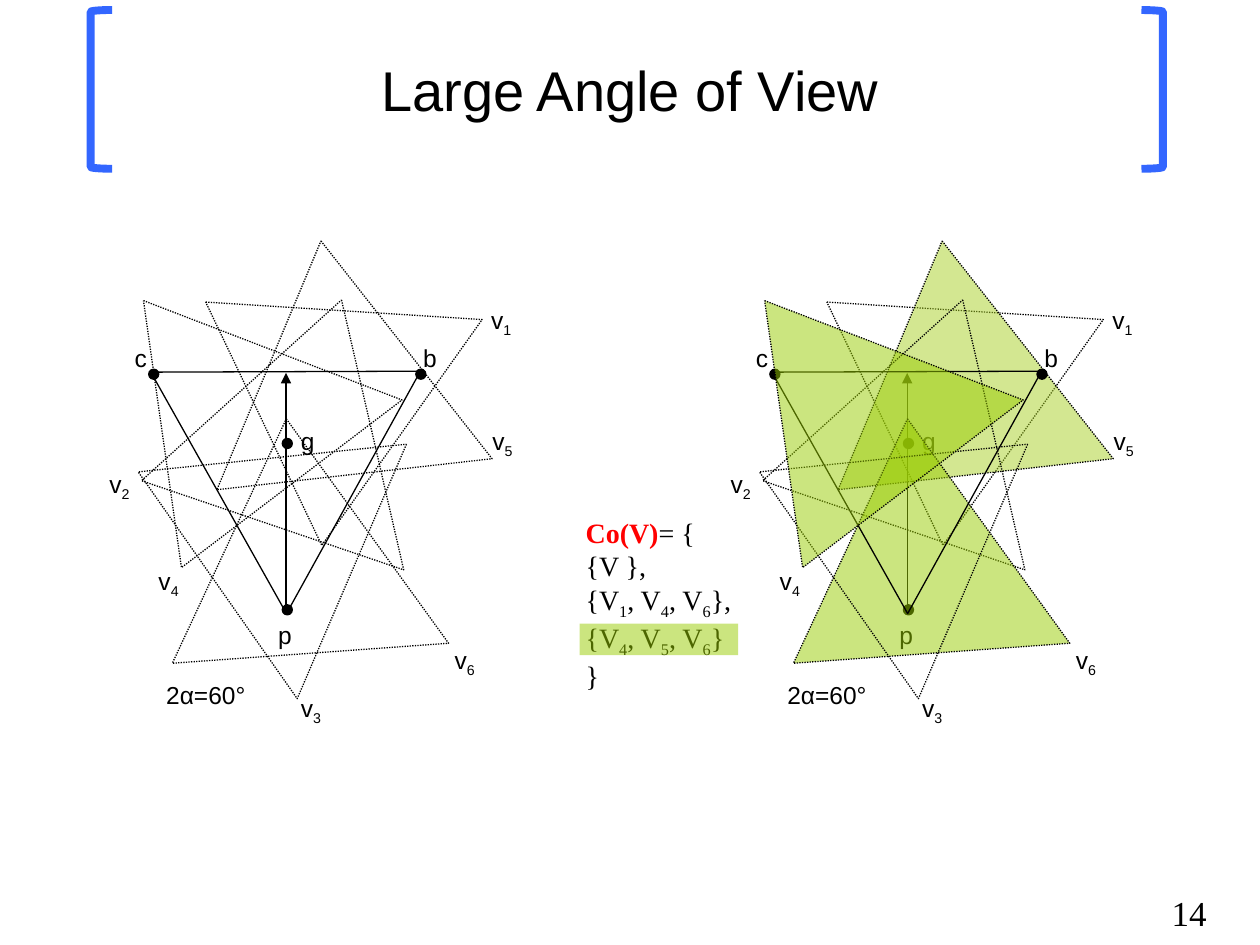
from lxml.etree import SubElement
from pptx import Presentation
from pptx.dml.color import RGBColor
from pptx.enum.dml import MSO_LINE
from pptx.enum.shapes import MSO_CONNECTOR, MSO_SHAPE as SHAPE
from pptx.enum.text import MSO_ANCHOR, MSO_AUTO_SIZE, PP_ALIGN
from pptx.oxml.ns import qn
from pptx.util import Pt

PX = 9144  # EMU per px, 100 px to the inch
COLORS = {"ink": "000000", "paper": "FFFFFF", "bracket": "3366FF",
          "green": "99CC00", "lime": "A8D025", "red": "FF0000"}
SANS, SERIF = "Arial", "Times New Roman"
TRIANGLE_SIZE = (214, 192)
DOT_SIZE = (8, 8)


def rgb(name):
    return RGBColor.from_string(COLORS[name])


def add_preset(shapes, kind, box, fill=None, alpha=None, line=None, width=0.75):
    shape = shapes.add_shape(kind, *(value * PX for value in box))
    shape.shadow.inherit = False
    if fill:
        shape.fill.solid()
        shape.fill.fore_color.rgb = rgb(fill)
        if alpha:
            color = shape._element.spPr.find(qn("a:solidFill"))[0]
            SubElement(color, qn("a:alpha")).set("val", str(alpha * 1000))
    else:
        shape.fill.background()
    if line:
        shape.line.color.rgb = rgb(line)
        shape.line.width = Pt(width)
    else:
        shape.line.fill.background()
    return shape


def add_text(shapes, box, lines, size, font, wrap=False):
    """Place lines of text; every second part between underscores is a subscript."""
    text_box = shapes.add_textbox(*(value * PX for value in box))
    frame = text_box.text_frame
    frame.word_wrap = wrap
    frame.auto_size = MSO_AUTO_SIZE.SHAPE_TO_FIT_TEXT
    for number, line in enumerate(lines):
        paragraph = frame.add_paragraph() if number else frame.paragraphs[0]
        for index, part in enumerate(line.split("_")):
            if not part:
                continue
            run = paragraph.add_run()
            run.text = part
            run.font.size = Pt(size)
            run.font.name = font
            run.font.color.rgb = rgb("ink")
            if index % 2:
                run.font._element.set("baseline", "-25000")
    return text_box


def add_header(shapes, left, top, width, height):
    # Brackets at both ends of the title
    for kind, x in ((SHAPE.LEFT_BRACKET, left - 3),
                    (SHAPE.RIGHT_BRACKET, left + width - 19)):
        add_preset(shapes, kind, (x, top, 17, height + 1), "paper",
                   line="bracket", width=4.5)
    # Title
    title = add_text(shapes, (left, top, width, height),
                     ["Large Angle of View"], 32, SANS, wrap=True)
    title.text_frame.auto_size = MSO_AUTO_SIZE.NONE
    title.text_frame.vertical_anchor = MSO_ANCHOR.MIDDLE
    title.text_frame.paragraphs[0].alignment = PP_ALIGN.CENTER


def add_view_diagram(shapes, left, top, fills):
    """Draw the six views; fills maps a view's name to its colour."""
    def add_triangle(x, y, rotation, view=None):
        fill = fills.get(view)
        triangle = add_preset(shapes, SHAPE.ISOSCELES_TRIANGLE,
                              (left + x, top + y, *TRIANGLE_SIZE), fill,
                              alpha=50 if fill else None, line="ink")
        triangle.rotation = rotation
        if view:
            triangle.line.dash_style = MSO_LINE.ROUND_DOT

    def add_dots(*places):
        for x, y in places:
            add_preset(shapes, SHAPE.OVAL, (left + x, top + y, *DOT_SIZE),
                       "ink", line="ink")

    add_triangle(112, 0, 64.5, "v1")

    # Points g and p
    add_dots((147, 149), (147, 281))

    # Labels of points and views
    for text, x, y, width in (
            ("g", 152, 134, 31), ("p", 134, 288, 31),
            ("b", 249, 68, 31), ("c", 20, 68, 30),
            ("v_1", 303, 38, 37), ("v_2", 0, 168, 37), ("v_3", 152, 346, 37),
            ("v_4", 39, 245, 37), ("v_5", 304, 134, 37), ("v_6", 274, 308, 37),
            ("2α=60°", 45, 336, 95)):
        add_text(shapes, (left + x, top + y, width, 33), [text], 14, SANS)

    # Viewing direction, with its head at the far side
    arrow = shapes.add_connector(
        MSO_CONNECTOR.STRAIGHT, (left + 150) * PX, (top + 97) * PX,
        (left + 150) * PX, (top + 286) * PX)
    arrow.line.color.rgb = rgb("ink")
    arrow.line.width = Pt(0.75)
    SubElement(arrow.line._get_or_add_ln(), qn("a:headEnd")).set("type", "triangle")
    SubElement(arrow._element.spPr, qn("a:effectLst"))

    # Views over the labels, then the solid triangle p, b, c
    add_triangle(118, 32, 112.7, "v5")
    add_triangle(72, 86, 137.9, "v2")
    add_triangle(85, 175, 115, "v6")
    add_triangle(42, 164, 174.1, "v3")
    add_triangle(43, 96, 179.8)

    # Points c and b
    add_dots((41, 94), (253, 94))
    add_triangle(40, 36, 81.9, "v4")


def add_view_sets(shapes, left, top):
    # The empty subscript in the first line keeps its name a run of its own
    lines = ["Co(V)__= {", "{V },", "{V_1_, V_4_, V_6_},",
             "{V_4_, V_5_, V_6_}", "}"]
    sets = add_text(shapes, (left, top, 156, 144), lines, 16, SERIF, wrap=True)
    name = sets.text_frame.paragraphs[0].runs[0]
    name.font.bold = True
    name.font.color.rgb = rgb("red")
    # Highlight of the chosen set
    add_preset(shapes, SHAPE.RECTANGLE, (left + 5, top + 91, 126, 25),
               "green", alpha=50)


def main():
    presentation = Presentation()
    presentation.slide_width = 1000 * PX
    presentation.slide_height = 750 * PX
    slide = presentation.slides.add_slide(presentation.slide_layouts[6])

    add_header(slide.shapes, 75, 8, 850, 125)
    add_text(slide.shapes, (920, 703, 53, 43), ["14"], 20, SERIF)
    add_view_diagram(slide.shapes, 77, 199, {})
    result = slide.shapes.add_group_shape().shapes
    add_view_diagram(result, 570, 199,
                     {"v4": "green", "v5": "lime", "v6": "green"})
    add_view_sets(result, 455, 404)
    presentation.save("out.pptx")


if __name__ == "__main__":
    main()
